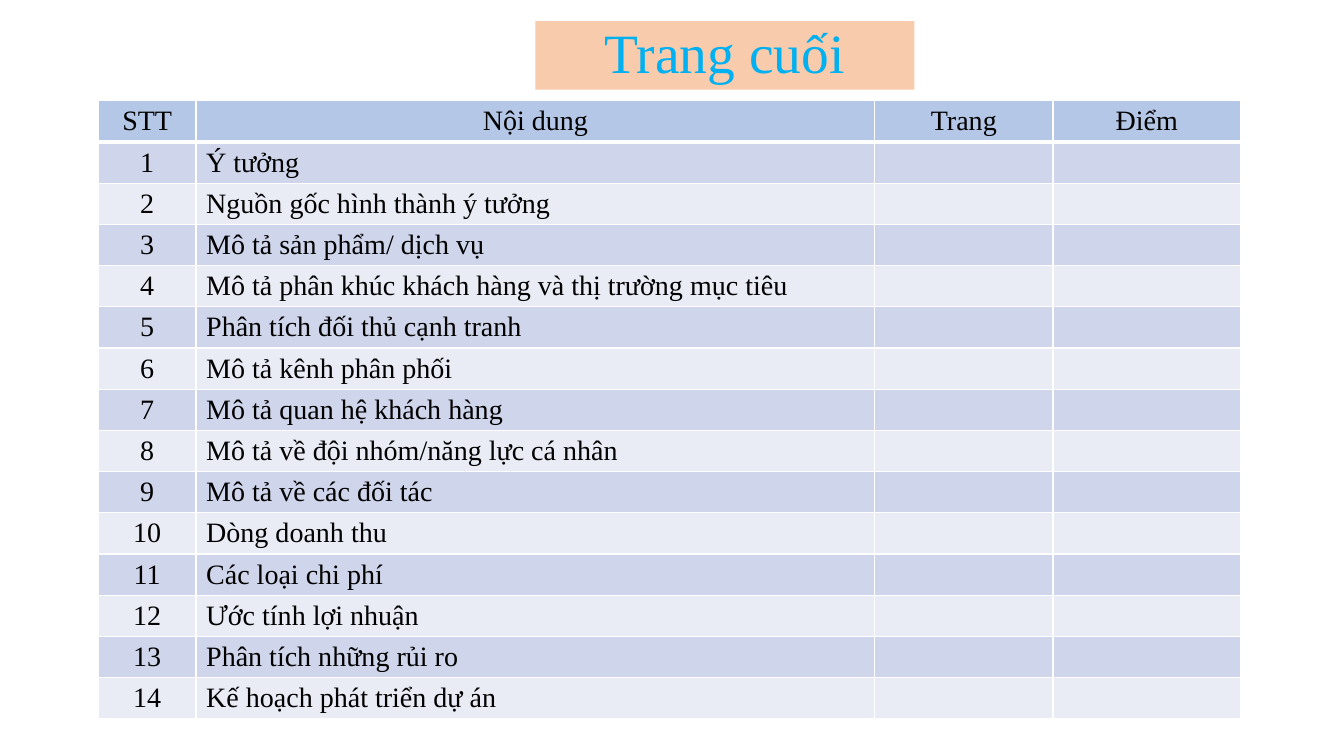
from dataclasses import dataclass

from lxml import etree
from pptx import Presentation
from pptx import util as u
from pptx.dml.color import RGBColor
from pptx.enum import shapes, text
from pptx.oxml.ns import qn


@dataclass(frozen=True)
class Theme:
    font: str = "Times New Roman"
    title_size: float = 39.6
    table_size: float = 20
    ink: str = "000000"
    title_ink: str = "00B0F0"
    title_fill: str = "F8CBAD"
    header_fill: str = "B4C7E7"
    band_fills: tuple = ("CFD5EA", "E9EBF5")
    border: str = "FFFFFF"
    border_width: float = 1
    header_rule_width: float = 3


HEADINGS = ["STT", "Nội dung", "Trang", "Điểm"]
CONTENTS = [
    "Ý tưởng",
    "Nguồn gốc hình thành ý tưởng",
    "Mô tả sản phẩm/ dịch vụ",
    "Mô tả phân khúc khách hàng và thị trường mục tiêu",
    "Phân tích đối thủ cạnh tranh",
    "Mô tả kênh phân phối",
    "Mô tả quan hệ khách hàng",
    "Mô tả về đội nhóm/năng lực cá nhân",
    "Mô tả về các đối tác",
    "Dòng doanh thu",
    "Các loại chi phí",
    "Ước tính lợi nhuận",
    "Phân tích những rủi ro",
    "Kế hoạch phát triển dự án",
]

GRID = u.Inches(0.1)  # one grid column or row


def grid(count):
    return round(count * GRID)


def write(frame, content, *, font, size, color, centered=False, spacing=None):
    paragraph = frame.paragraphs[0]
    if centered:
        paragraph.alignment = text.PP_ALIGN.CENTER
    if spacing:
        paragraph.line_spacing = spacing
    run = paragraph.add_run()
    run.text = content
    run.font.name = font
    run.font.size = u.Pt(size)
    run.font.color.rgb = RGBColor.from_string(color)


def paint(target, color):
    target.fill.solid()
    target.fill.fore_color.rgb = RGBColor.from_string(color)


class SlideBuilder:
    def __init__(self, slide, theme):
        self.slide = slide
        self.theme = theme

    def title(self, content, left, top, width, height):
        shape = self.slide.shapes.add_shape(
            shapes.MSO_SHAPE.RECTANGLE, *map(grid, (left, top, width, height)))
        shape.shadow.inherit = False
        shape.line.fill.background()
        paint(shape, self.theme.title_fill)
        shape.text_frame.word_wrap = True
        shape.text_frame.vertical_anchor = text.MSO_ANCHOR.MIDDLE
        write(shape.text_frame, content, font=self.theme.font,
              size=self.theme.title_size, color=self.theme.title_ink,
              centered=True, spacing=0.9)

    def table(self, rows, left, top, widths, height):
        frame = self.slide.shapes.add_table(
            len(rows), len(widths), grid(left), grid(top),
            grid(sum(widths)), grid(height))
        table = frame.table
        for column, width in zip(table.columns, widths):
            column.width = grid(width)
        for row_index, values in enumerate(rows):
            for column_index, value in enumerate(values):
                self.cell(table.cell(row_index, column_index), value,
                          row_index, column_index)

    def cell(self, cell, value, row_index, column_index):
        theme = self.theme
        header = row_index == 0
        if value:
            write(cell.text_frame, value, font=theme.font,
                  size=theme.table_size, color=theme.ink,
                  centered=header or column_index == 0)
        # Borders come before the fill in the cell properties
        properties = cell._tc.get_or_add_tcPr()
        for side in ("L", "R", "T", "B"):
            touches_header = (header and side == "B") or (row_index == 1 and side == "T")
            width = theme.header_rule_width if touches_header else theme.border_width
            line = etree.SubElement(properties, qn(f"a:ln{side}"), w=str(u.Pt(width)))
            fill = etree.SubElement(line, qn("a:solidFill"))
            etree.SubElement(fill, qn("a:srgbClr"), val=theme.border)
        paint(cell, theme.header_fill if header
              else theme.band_fills[(row_index - 1) % 2])


def main():
    presentation = Presentation()
    presentation.slide_width = u.Inches(13.33)
    presentation.slide_height = u.Inches(7.5)
    slide = presentation.slides.add_slide(presentation.slide_layouts[6])
    builder = SlideBuilder(slide, Theme())

    # Title band
    builder.title("Trang cuối", left=53.1, top=2.1, width=37.6, height=6.8)

    # Numbered contents with empty page and score columns
    rows = [HEADINGS]
    rows += [[str(number), content, "", ""]
             for number, content in enumerate(CONTENTS, start=1)]
    builder.table(rows, left=9.75, top=10, widths=[9.7, 67.3, 17.7, 18.6],
                  height=61.3)

    presentation.save("out.pptx")


if __name__ == "__main__":
    main()
